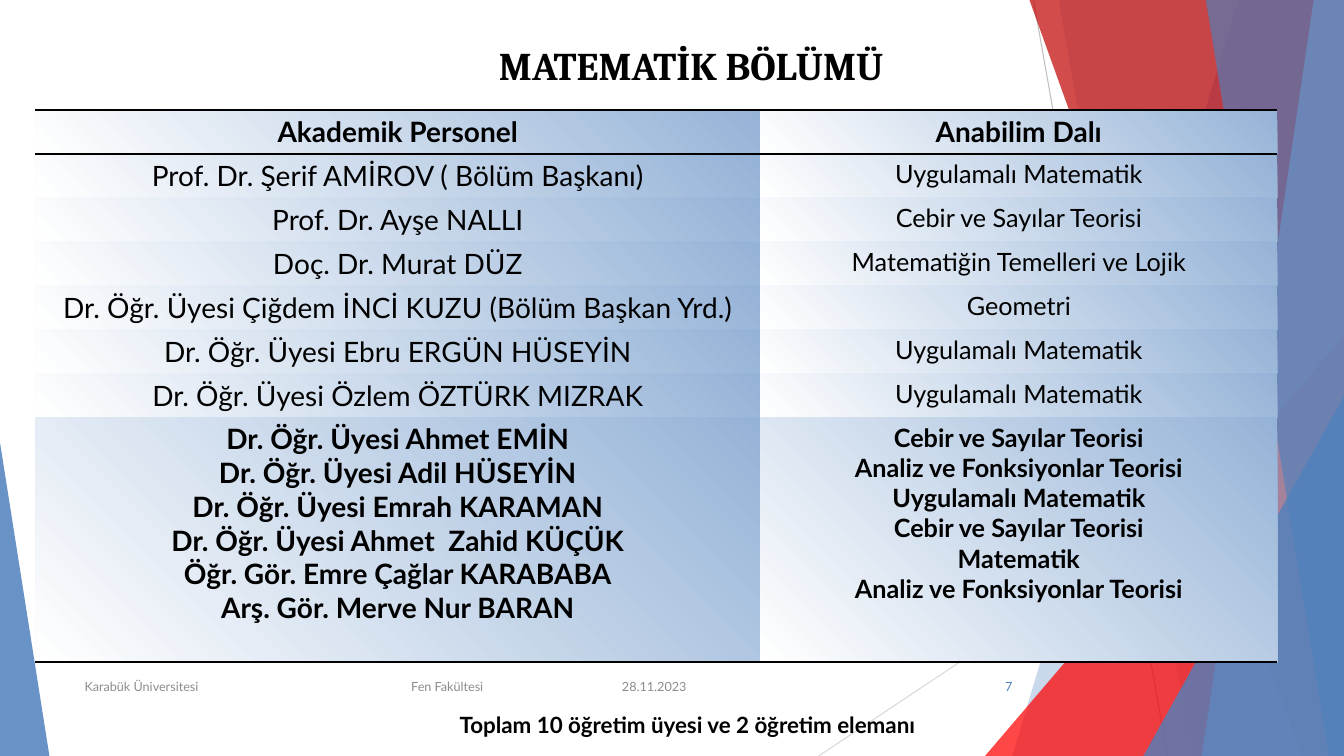
from dataclasses import dataclass
from typing import NamedTuple

from lxml import etree
from pptx import Presentation
from pptx import util as u
from pptx.dml.color import RGBColor
from pptx.enum import shapes, text
from pptx.oxml import ns


@dataclass(frozen=True)
class Theme:
    head: str = "Cambria"
    body: str = "Lato"
    black: str = "000000"
    white: str = "FFFFFF"
    grey: str = "8C8C8C"
    blue: str = "4F81BD"
    pale: str = "95B3D7"
    red: str = "FF0000"
    dark: str = "BF0000"
    title: int = 28
    large: int = 20
    mid: int = 18
    note: int = 16
    small: int = 9


class Box(NamedTuple):
    left: float
    top: float
    width: float
    height: float


class Ray(NamedTuple):
    start: tuple[float, float]
    end: tuple[float, float]
    color: str


class Band(NamedTuple):
    points: list[tuple[float, float]]
    color: str
    alpha: int


class Wedge(NamedTuple):
    box: Box
    tip: float
    color: str
    alpha: int


class Row(NamedTuple):
    staff: list[str]
    field: list[str]
    bold: bool = False
    rules: tuple[str, ...] = ()


THEME = Theme()
EDGE, BASE = 13.33, 7.5


def panel(top: float, foot: float, color: str, alpha: int) -> Band:
    return Band([(top, 0), (EDGE, 0), (EDGE, BASE), (foot, BASE)], color, alpha)


RAYS = [
    Ray((10.25, 0), (11.58, BASE), "BFBFBF"),
    Ray((EDGE, 4.03), (8.12, BASE), "D9D9D9"),
]
DECOR = [
    panel(12.28, 10.04, THEME.blue, 30),
    panel(10.5, 11.83, THEME.blue, 20),
    Wedge(Box(9.77, 3.33, 3.56, 4.17), 1, THEME.red, 72),
    panel(10.21, 12.91, THEME.dark, 70),
    panel(13.03, 11.92, THEME.pale, 70),
    panel(11.96, 13.18, THEME.blue, 65),
    Wedge(Box(11.34, 3.93, 1.99, 3.57), 1, THEME.blue, 80),
    Wedge(Box(0, 4.39, 0.49, 3.11), 0, THEME.blue, 85),
]
ROWS = [
    Row(["Akademik Personel"], ["Anabilim Dalı"], True, ("lnT", "lnB")),
    Row(["Prof. Dr. Şerif AMİROV ( Bölüm Başkanı)"], ["Uygulamalı Matematik"]),
    Row(["Prof. Dr. Ayşe NALLI"], ["Cebir ve Sayılar Teorisi"]),
    Row(["Doç. Dr. Murat DÜZ"], ["Matematiğin Temelleri ve Lojik"]),
    Row(["Dr. Öğr. Üyesi Çiğdem İNCİ KUZU (Bölüm Başkan Yrd.)"], ["Geometri"]),
    Row(["Dr. Öğr. Üyesi Ebru ERGÜN HÜSEYİN"], ["Uygulamalı Matematik"]),
    Row(["Dr. Öğr. Üyesi Özlem ÖZTÜRK MIZRAK"], ["Uygulamalı Matematik"]),
    Row(
        ["Dr. Öğr. Üyesi Ahmet EMİN", "Dr. Öğr. Üyesi Adil HÜSEYİN",
         "Dr. Öğr. Üyesi Emrah KARAMAN", "Dr. Öğr. Üyesi Ahmet  Zahid KÜÇÜK",
         "Öğr. Gör. Emre Çağlar KARABABA", "Arş. Gör. Merve Nur BARAN"],
        ["Cebir ve Sayılar Teorisi", "Analiz ve Fonksiyonlar Teorisi",
         "Uygulamalı Matematik", "Cebir ve Sayılar Teorisi",
         "Matematik", "Analiz ve Fonksiyonlar Teorisi"],
        True, ("lnB",),
    ),
]


def inches(box) -> list[int]:
    return [u.Inches(side) for side in box]


def rgb(color: str) -> RGBColor:
    return RGBColor.from_string(color)


def node(parent, tag: str, **attrs: str):
    return etree.SubElement(parent, ns.qn(tag), attrs)


def style(para, size: int, color: str, bold: bool = False,
          face: str = THEME.body, align=text.PP_ALIGN.LEFT) -> None:
    para.alignment = align
    font = para.font
    font.name, font.size, font.bold = face, u.Pt(size), bold
    font.color.rgb = rgb(color)


def draw_ray(slide, ray: Ray) -> None:
    line = slide.shapes.add_connector(
        shapes.MSO_CONNECTOR.STRAIGHT, *inches(ray.start), *inches(ray.end))
    line.line.color.rgb = rgb(ray.color)
    line.line.width = u.Pt(0.75)
    node(line._element.spPr, "a:effectLst")


def draw_decor(slide, item: Band | Wedge) -> None:
    if isinstance(item, Band):
        first, *rest = [inches(point) for point in item.points]
        path = slide.shapes.build_freeform(*first)
        path.add_line_segments(rest, close=True)
        shape = path.convert_to_shape()
    else:
        kind = shapes.MSO_SHAPE.ISOSCELES_TRIANGLE
        shape = slide.shapes.add_shape(kind, *inches(item.box))
        shape.adjustments[0] = item.tip
    shape.shadow.inherit = False
    shape.line.fill.background()
    shape.fill.solid()
    shape.fill.fore_color.rgb = rgb(item.color)
    tint = shape._element.spPr.find(".//" + ns.qn("a:srgbClr"))
    node(tint, "a:alpha", val=str(item.alpha * 1000))


def draw_cell(cell, lines: list[str], size: int, row: Row) -> None:
    cell.text = "\n".join(lines)
    for para in cell.text_frame.paragraphs:
        style(para, size, THEME.black, row.bold, align=text.PP_ALIGN.CENTER)
    props = cell._tc.get_or_add_tcPr()
    for side in row.rules:
        rule = node(props, "a:" + side, w=str(u.Pt(2)))
        node(node(rule, "a:solidFill"), "a:srgbClr", val=THEME.black)
    cell.fill.gradient()
    cell.fill.gradient_angle = 225
    for stop, place, color in zip(
            cell.fill.gradient_stops, (0, 1), (THEME.pale, THEME.white)):
        stop.position = place
        stop.color.rgb = rgb(color)


def draw_table(slide, box: Box) -> None:
    table = slide.shapes.add_table(len(ROWS), 2, *inches(box)).table
    table.first_row = table.horz_banding = False
    plain = table._tbl.tblPr.find(ns.qn("a:tableStyleId"))
    plain.text = "{2D5ABB26-0587-4C30-8999-92F81FD0307C}"
    for col, width in zip(table.columns, (7.19, 5.13)):
        col.width = u.Inches(width)
    for i, row in enumerate(ROWS):
        table.rows[i].height = u.Inches(0.43 if len(row.staff) == 1 else 2.43)
        draw_cell(table.cell(i, 0), row.staff, THEME.large, row)
        draw_cell(table.cell(i, 1), row.field,
                  THEME.large if i == 0 else THEME.mid, row)


def draw_text(slide, box: Box, words: str, size: int, color: str,
              bold: bool = False, align=text.PP_ALIGN.LEFT,
              anchor=text.MSO_ANCHOR.MIDDLE, tabs: tuple[float, ...] = ()) -> None:
    frame = slide.shapes.add_textbox(*inches(box)).text_frame
    frame.word_wrap = True
    frame.vertical_anchor = anchor
    para = frame.paragraphs[0]
    para.text = words
    if tabs:
        stops = node(para._p.get_or_add_pPr(), "a:tabLst")
        for tab in tabs:
            node(stops, "a:tab", pos=str(u.Inches(tab)), algn="l")
    style(para, size, color, bold, align=align)


def draw_title(slide, box: Box, words: str) -> None:
    title = slide.shapes.title
    title.left, title.top, title.width, title.height = inches(box)
    title.text = words
    title.text_frame.auto_size = text.MSO_AUTO_SIZE.NONE
    style(title.text_frame.paragraphs[0], THEME.title, THEME.black, True,
          THEME.head, text.PP_ALIGN.CENTER)
    slide.shapes._spTree.append(title._element)


def main() -> None:
    deck = Presentation()
    deck.slide_width, deck.slide_height = inches((EDGE, BASE))
    slide = deck.slides.add_slide(deck.slide_layouts[5])
    for ray in RAYS:
        draw_ray(slide, ray)
    for item in DECOR:
        draw_decor(slide, item)
    draw_title(slide, Box(0.6, 0.36, 12.51, 0.57), "MATEMATİK BÖLÜMÜ")
    draw_table(slide, Box(0.35, 1.09, 12.32, 5.47))
    draw_text(slide, Box(4.46, 7.01, 5.08, 0.37),
              "Toplam 10 öğretim üyesi ve 2 öğretim elemanı", THEME.note,
              THEME.black, True, anchor=text.MSO_ANCHOR.TOP)
    draw_text(slide, Box(0.74, 6.61, 6.89, 0.4),
              "Karabük Üniversitesi\tFen Fakültesi\t28.11.2023", THEME.small,
              THEME.grey, tabs=(3.24, 5.33))
    draw_text(slide, Box(9.39, 6.61, 0.75, 0.4), "7", THEME.small, THEME.blue,
              align=text.PP_ALIGN.RIGHT)
    deck.save("out.pptx")


if __name__ == "__main__":
    main()
